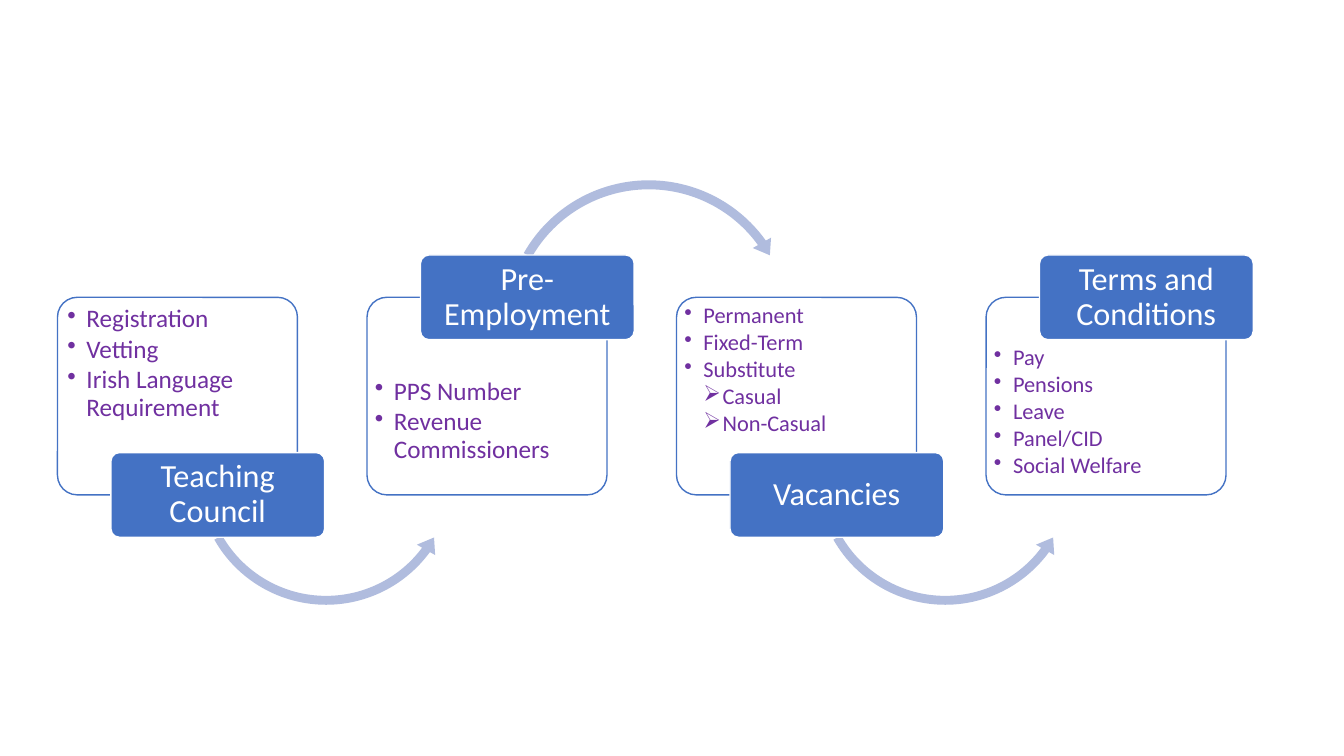
from dataclasses import dataclass

from lxml import etree
from pptx import Presentation
from pptx.dml.color import RGBColor as RGB
from pptx.enum.shapes import MSO_SHAPE as SHAPE
from pptx.enum.text import MSO_ANCHOR as ANCHOR, PP_ALIGN as ALIGN
from pptx.oxml.ns import qn
from pptx.util import Inches, Pt


@dataclass(frozen=True)
class Theme:
    """Colours and type sizes of the slide."""
    font: str = "Calibri"
    blue: RGB = RGB(0x44, 0x72, 0xC4)
    arrow: RGB = RGB(0xB0, 0xBC, 0xDE)
    white: RGB = RGB(0xFF, 0xFF, 0xFF)
    purple: RGB = RGB(0x70, 0x30, 0xA0)
    label_size: int = 23
    large: int = 18
    small: int = 16


T = Theme()
LEFT, TOP, PITCH = 0.57, 2.95, 3.07
PANEL_W, PANEL_H = 2.38, 1.96
LABEL_W, LABEL_H = 2.12, 0.84
INDENT = 0.19

STAGES = [
    dict(title="Teaching Council", size=T.large, pad=(0.04, 0.03),
         items=[("Registration", 1), ("Vetting", 1), ("Irish Language Requirement", 1)]),
    dict(title="Pre-Employment", size=T.large, pad=(0.02, 0.75),
         items=[("PPS Number", 1), ("Revenue Commissioners", 1)]),
    dict(title="Vacancies", size=T.small, pad=(0.02, 0.01),
         items=[("Permanent", 1), ("Fixed-Term", 1), ("Substitute", 1),
                ("Casual", 2), ("Non-Casual", 2)]),
    dict(title="Terms and Conditions", size=T.small, pad=(0.02, 0.43),
         items=[("Pay", 1), ("Pensions", 1), ("Leave", 1),
                ("Panel/CID", 1), ("Social Welfare", 1)]),
]


def add_shape(s, kind, x, y, w, h, adjustments, fill, line=None):
    """Add a flat preset shape with an optional one-point outline."""
    sp = s.shapes.add_shape(kind, Inches(x), Inches(y), Inches(w), Inches(h))
    sp.shadow.inherit = False
    for i, value in enumerate(adjustments):
        sp.adjustments[i] = value
    sp.fill.solid()
    sp.fill.fore_color.rgb = fill
    if line is None:
        sp.line.fill.background()
    else:
        sp.line.color.rgb = line
        sp.line.width = Pt(1)
    return sp


def set_margins(tf, left, top, right, bottom):
    """Set the four text insets in inches and turn wrapping on."""
    tf.word_wrap = True
    tf.margin_left, tf.margin_top = Inches(left), Inches(top)
    tf.margin_right, tf.margin_bottom = Inches(right), Inches(bottom)


def style_paragraph(p, size, color, align):
    """Apply type, alignment and spacing to one paragraph."""
    p.alignment = align
    p.line_spacing = 0.9
    p.space_after = Pt(size * 0.13)
    for r in p.runs:
        r.font.name, r.font.size = T.font, Pt(size)
        r.font.color.rgb = color


def add_bullet(p, level):
    """Give a paragraph the bullet and hanging indent of its level."""
    p.level = level
    pPr = p._p.get_or_add_pPr()
    pPr.set("marL", str(Inches(INDENT * level)))
    pPr.set("indent", str(-Inches(INDENT)))
    etree.SubElement(pPr, qn("a:buChar")).set("char", "•" if level == 1 else "➢")


def add_panel(s, x, y, stage):
    """Add the outlined panel with its bullet list."""
    sp = add_shape(s, SHAPE.ROUNDED_RECTANGLE, x, y, PANEL_W, PANEL_H,
                   [0.1], T.white, T.blue)
    color = sp.fill._xPr.find(qn("a:solidFill"))[0]
    etree.SubElement(color, qn("a:alpha")).set("val", "90000")
    tf = sp.text_frame
    left, top = stage["pad"]
    set_margins(tf, left, top, left, 0)
    tf.vertical_anchor = ANCHOR.TOP
    tf.text = "\n".join(text for text, _ in stage["items"])
    for p, (_, level) in zip(tf.paragraphs, stage["items"]):
        add_bullet(p, level)
        style_paragraph(p, stage["size"], T.purple, ALIGN.LEFT)


def add_arrow(s, x, y, below):
    """Add the curved arrow that leads to the next stage."""
    if below:
        add_shape(s, SHAPE.LEFT_CIRCULAR_ARROW, x + 1.33, y + 0.44, 2.67, 2.67,
                  [0.033, 4.084, 21.839, 90.245, 0.039], T.arrow)
    else:
        add_shape(s, SHAPE.CIRCULAR_ARROW, x + 1.31, y - 1.22, 2.97, 2.97,
                  [0.03, 3.637, 194.608, 125.755, 0.035], T.arrow)


def add_label(s, x, y, title, below):
    """Add the stage title over the lower or upper edge of its panel."""
    edge = y + PANEL_H if below else y
    sp = add_shape(s, SHAPE.ROUNDED_RECTANGLE, x + 0.53, edge - LABEL_H / 2,
                   LABEL_W, LABEL_H, [0.1], T.blue, T.white)
    tf = sp.text_frame
    set_margins(tf, 0.05, 0.03, 0.05, 0.03)
    tf.vertical_anchor = ANCHOR.MIDDLE
    tf.text = title
    style_paragraph(tf.paragraphs[0], T.label_size, T.white, ALIGN.CENTER)


def add_process(s, x, y):
    """Add the four stages, with labels alternating below and above."""
    for i, stage in enumerate(STAGES):
        left, below = x + i * PITCH, i % 2 == 0
        add_panel(s, left, y, stage)
        if i < len(STAGES) - 1:
            add_arrow(s, left, y, below)
        add_label(s, left, y, stage["title"], below)


def main():
    """Build and save the slide."""
    prs = Presentation()
    prs.slide_width, prs.slide_height = Inches(13.33), Inches(7.5)
    s = prs.slides.add_slide(prs.slide_layouts[6])
    add_process(s, LEFT, TOP)
    prs.save("out.pptx")


if __name__ == "__main__":
    main()
